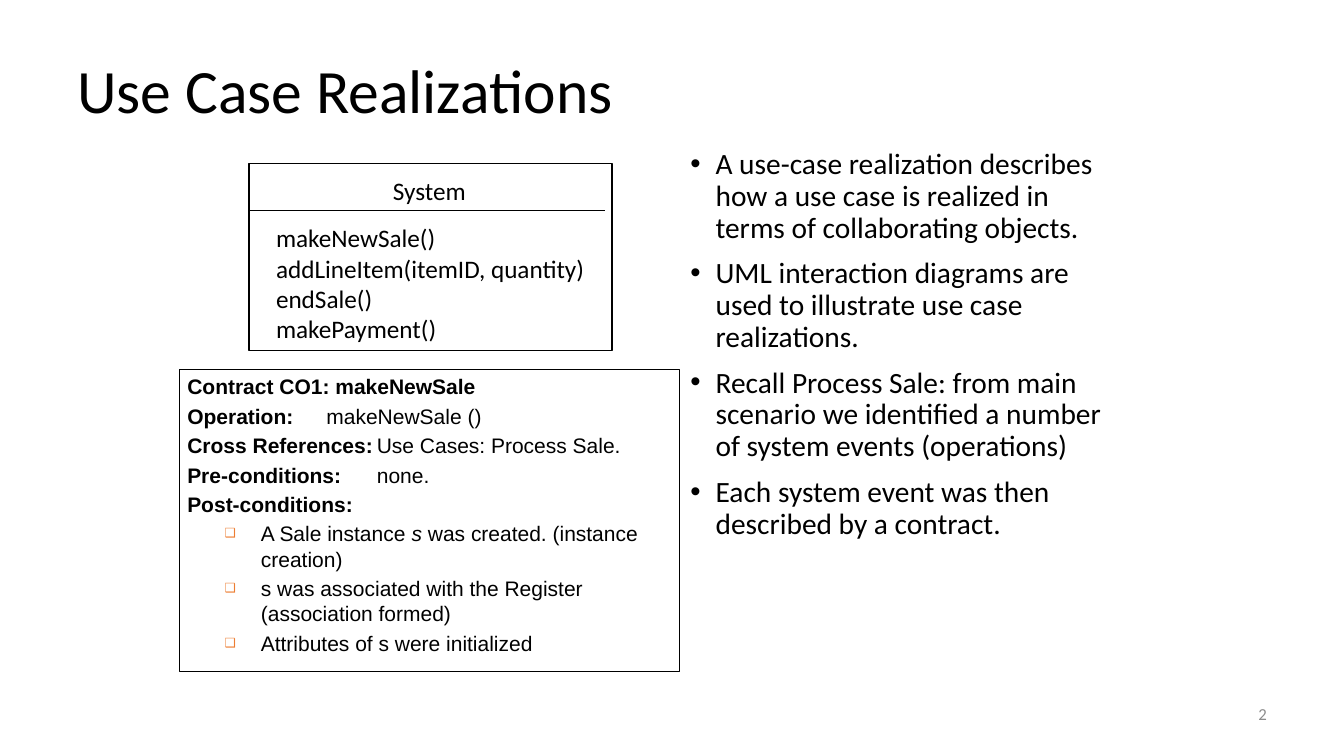
from pptx import Presentation, util as u
from pptx.dml.color import RGBColor
from pptx.enum import shapes as sh, text as tx
from pptx.oxml.ns import qn
from lxml import etree

BLACK, WHITE, GREY, ORANGE = "000000", "FFFFFF", "8C8C8C", "ED7D31"

TITLE = "Use Case Realizations"
PAGE = "2"
POINTS = [
    "A use-case realization describes how a use case is realized in terms of collaborating objects.",
    "UML interaction diagrams are used to illustrate use case realizations.",
    "Recall Process Sale: from main scenario we identified a number of system events (operations)",
    "Each system event was then described by a contract.",
]
CLASS = "System"
CALLS = ["makeNewSale()", "addLineItem(itemID, quantity)", "endSale()", "makePayment()"]
# Each paragraph is a list of (text, style): b = bold, i = italic
FIELDS = [
    [("Contract CO1: makeNewSale", "b")],
    [("Operation:\t", "b"), ("makeNewSale ()", "")],
    [("Cross References:\t", "b"), ("Use Cases: Process Sale.", "")],
    [("Pre-conditions:\t", "b"), ("none.", "")],
    [("Post-conditions:", "b")],
]
EFFECTS = [
    [("A Sale instance ", ""), ("s", "i"), (" was created. (instance creation)", "")],
    "s was associated with the Register (association formed)",
    "Attributes of s were initialized",
]

# Left, top, width, height as percent of the slide
AREA = {
    "page": (71.7, 91.1, 23.3, 6.67),
    "title": (5, 4, 90, 16.67),
    "points": (50.63, 19.07, 33.16, 66),
    "class": (18.53, 21.6, 27, 24.8),
    "name": (28.5, 22.53, 7, 5.33),
    "calls": (19.8, 28.8, 24.75, 17.47),
    "contract": (13.2, 48.8, 38.56, 46.4),
    "frame": (13.35, 48.93, 37.2, 39.87),
}
RULE_Y, RULE_END = 27.87, 45

deck = Presentation()
deck.slide_width, deck.slide_height = u.Inches(13.33), u.Inches(7.5)
slide = deck.slides.add_slide(deck.slide_layouts[6])


def across(share):
    return int(deck.slide_width * share / 100)


def down(share):
    return int(deck.slide_height * share / 100)


def place(key):
    x, y, w, h = AREA[key]
    return across(x), down(y), across(w), down(h)


def color(code):
    return RGBColor.from_string(code)


def mark(props, char, tint=None, size=None):
    """Add a bullet to paragraph properties."""
    if tint:
        node = etree.SubElement(props, qn("a:buClr"))
        etree.SubElement(node, qn("a:srgbClr"), val=tint)
    if size:
        etree.SubElement(props, qn("a:buSzPct"), val=str(size * 1000))
    etree.SubElement(props, qn("a:buFont"), typeface="Arial")
    etree.SubElement(props, qn("a:buChar"), char=char)


def write(frame, paras, size, font="Calibri", ink=BLACK, align="LEFT", wrap=True,
          anchor="TOP", lines=None, before=0, indent=None, bullet=None):
    """Append paragraphs; indent is (left, first line) in inches."""
    frame.word_wrap = wrap
    frame.vertical_anchor = getattr(tx.MSO_ANCHOR, anchor)
    for parts in paras:
        fresh = not frame.paragraphs[0].runs
        para = frame.paragraphs[0] if fresh else frame.add_paragraph()
        para.alignment = getattr(tx.PP_ALIGN, align)
        para.space_before = u.Pt(before)
        if lines:
            para.line_spacing = lines
        props = para._p.get_or_add_pPr()
        if indent:
            props.set("marL", str(u.Inches(indent[0])))
            props.set("indent", str(u.Inches(indent[1])))
        if bullet:
            mark(props, *bullet)
        for words, style in [(parts, "")] if isinstance(parts, str) else parts:
            run = para.add_run()
            run.text = words
            run.font.name, run.font.size = font, u.Pt(size)
            run.font.bold, run.font.italic = "b" in style, "i" in style
            run.font.color.rgb = color(ink)


def label(key, paras, size, home=slide, **form):
    frame = home.shapes.add_textbox(*place(key)).text_frame
    write(frame, paras, size, **form)
    return frame


def border(key, width, fill=None, home=slide):
    box = home.shapes.add_shape(sh.MSO_SHAPE.RECTANGLE, *place(key))
    box.shadow.inherit = False
    if fill:
        box.fill.solid()
        box.fill.fore_color.rgb = color(fill)
    else:
        box.fill.background()
    box.line.color.rgb, box.line.width = color(BLACK), u.Pt(width)


label("page", [PAGE], 12, ink=GREY, align="RIGHT", anchor="MIDDLE")
label("title", [TITLE], 44, anchor="MIDDLE", lines=0.9)
label("points", POINTS, 21, lines=0.9, before=10, indent=(0.25, -0.25), bullet=("•",))

group = slide.shapes.add_group_shape()
border("class", 1, WHITE, group)
label("name", [CLASS], 18, group, wrap=False)
label("calls", CALLS, 18, group, wrap=False)
rule = group.shapes.add_connector(sh.MSO_CONNECTOR.STRAIGHT, across(AREA["class"][0]),
                                  down(RULE_Y), across(RULE_END), down(RULE_Y))
rule.line.color.rgb, rule.line.width = color(BLACK), u.Pt(1)
etree.SubElement(rule._element.spPr, qn("a:effectLst"))

contract = label("contract", FIELDS, 15, font="Arial", before=3, indent=(0.38, -0.38))
write(contract, EFFECTS, 15, font="Arial", before=3, indent=(0.73, -0.36),
      bullet=("❑", ORANGE, 60))
border("frame", 0.75)

deck.save("out.pptx")
